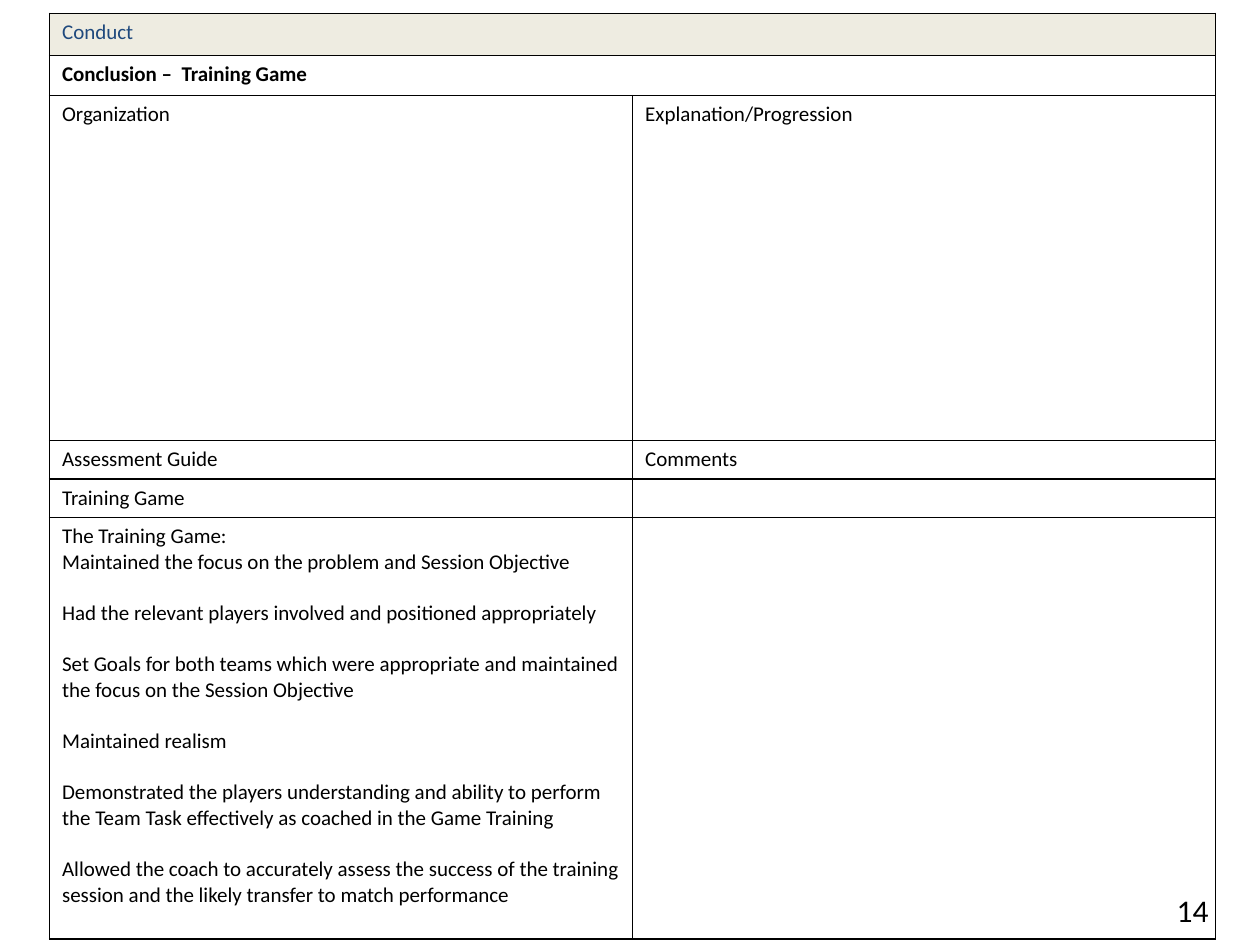
from lxml import etree
from pptx import Presentation
from pptx.dml.color import RGBColor
from pptx.enum.text import MSO_AUTO_SIZE
from pptx.oxml.ns import qn
from pptx.util import Pt

BLACK = RGBColor(0x00, 0x00, 0x00)
WHITE = RGBColor(0xFF, 0xFF, 0xFF)
NAVY = RGBColor(0x1F, 0x49, 0x7D)
CREAM = RGBColor(0xEE, 0xEC, 0xE1)
FIT_SHAPE = MSO_AUTO_SIZE.SHAPE_TO_FIT_TEXT
BLANK_LAYOUT = 6

COLUMN_WIDTH = 333.2
ROW_HEIGHTS = [24, 23, 197, 22, 22, 241]
BORDER_TAGS = ["a:lnL", "a:lnR", "a:lnT", "a:lnB"]

ASSESSMENT = [
    "The Training Game:",
    "Maintained the focus on the problem and Session Objective",
    "Had the relevant players involved and positioned appropriately",
    "Set Goals for both teams which were appropriate and maintained "
    "the focus on the Session Objective",
    "Maintained realism",
    "Demonstrated the players understanding and ability to perform "
    "the Team Task effectively as coached in the Game Training",
    "Allowed the coach to accurately assess the success of the training "
    "session and the likely transfer to match performance",
]

# A row with one entry spans both columns
ROWS = [
    [["Conduct"]],
    [["Conclusion –  Training Game"]],
    [["Organization"], ["Explanation/Progression"]],
    [["Assessment Guide"], ["Comments"]],
    [["Training Game"], [""]],
    [ASSESSMENT, [""]],
]


class SlideBuilder:
    font = "Calibri"
    cell_size = 12
    number_size = 18
    item_gap = 14.65

    def __init__(self, slide):
        self.slide = slide

    def format_text(self, frame, size, color=BLACK, bold=False):
        for para in frame.paragraphs:
            for span in para.runs:
                span.font.name = self.font
                span.font.size = Pt(size)
                span.font.bold = bold
                span.font.color.rgb = color
            if not para.runs:
                # Keeps an empty cell from growing its row
                end = para._p.get_or_add_endParaRPr()
                end.set("sz", str(size * 100))

    def border(self, cell):
        properties = cell._tc.get_or_add_tcPr()
        for position, tag in enumerate(BORDER_TAGS):
            line = etree.Element(qn(tag), w=str(Pt(1)))
            fill = etree.SubElement(line, qn("a:solidFill"))
            etree.SubElement(fill, qn("a:srgbClr"), val=str(BLACK))
            properties.insert(position, line)

    def table(self, left, top, rows, heights, column_width):
        columns = max(len(row) for row in rows)
        table = self.slide.shapes.add_table(
            len(rows), columns, Pt(left), Pt(top),
            Pt(column_width * columns), Pt(sum(heights))).table
        for column in table.columns:
            column.width = Pt(column_width)
        for index, (entries, height) in enumerate(zip(rows, heights)):
            table.rows[index].height = Pt(height)
            if len(entries) < columns:
                table.cell(index, 0).merge(table.cell(index, columns - 1))
            for position in range(columns):
                cell = table.cell(index, position)
                cell.fill.solid()
                cell.fill.fore_color.rgb = CREAM if index == 0 else WHITE
                self.border(cell)
            for position, lines in enumerate(entries):
                frame = table.cell(index, position).text_frame
                frame.text = "\n".join(lines)
                # The heading and its first item stay together
                for para in frame.paragraphs[2:]:
                    para.space_before = Pt(self.item_gap)
                self.format_text(frame, self.cell_size,
                                 NAVY if index == 0 else BLACK, index == 1)

    def page_number(self, left, top, width, height, number):
        box = self.slide.shapes.add_textbox(
            Pt(left), Pt(top), Pt(width), Pt(height))
        frame = box.text_frame
        frame.word_wrap = True
        frame.auto_size = FIT_SHAPE
        frame.text = number
        self.format_text(frame, self.number_size)


def main():
    deck = Presentation()
    deck.slide_width, deck.slide_height = Pt(720), Pt(540)
    builder = SlideBuilder(
        deck.slides.add_slide(deck.slide_layouts[BLANK_LAYOUT]))

    # Session assessment form
    builder.table(28.3, 7.7, ROWS, ROW_HEIGHTS, COLUMN_WIDTH)

    # Page number
    builder.page_number(665.3, 505.4, 37.4, 29.1, "14")

    deck.save("out.pptx")


if __name__ == "__main__":
    main()
